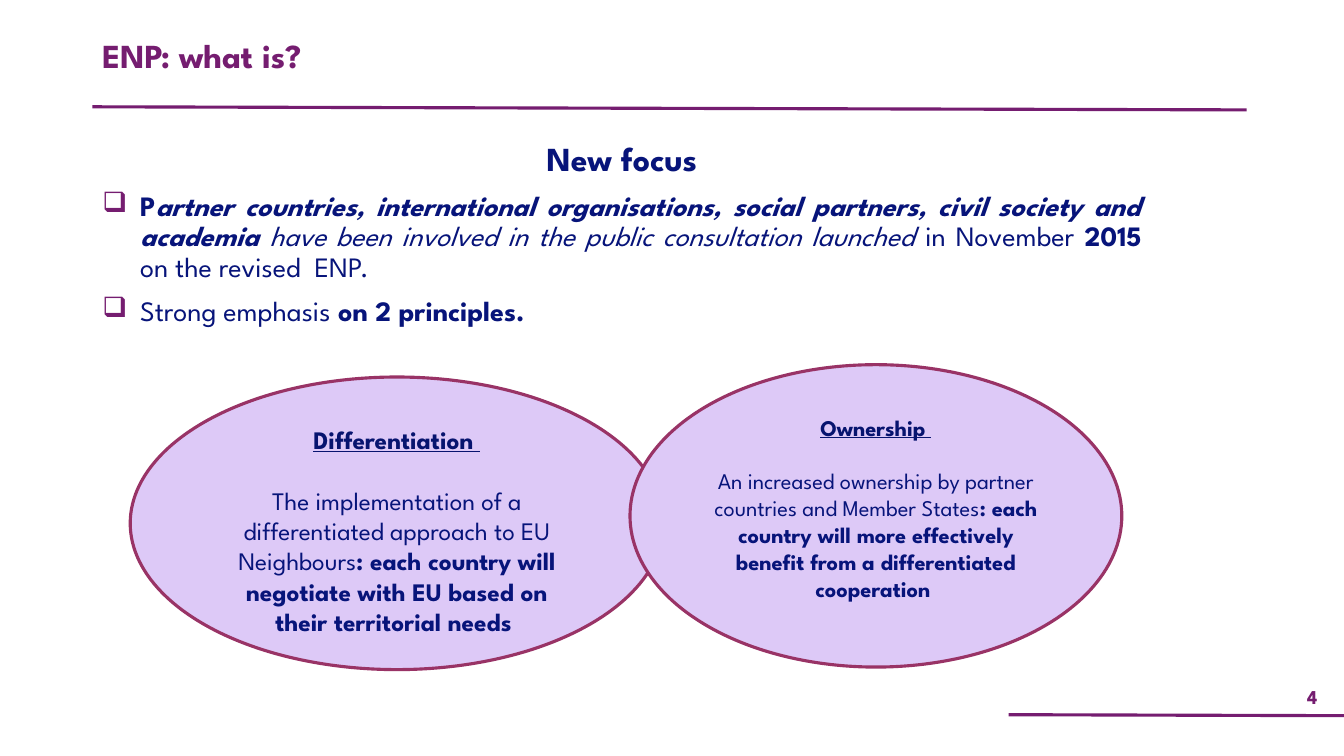
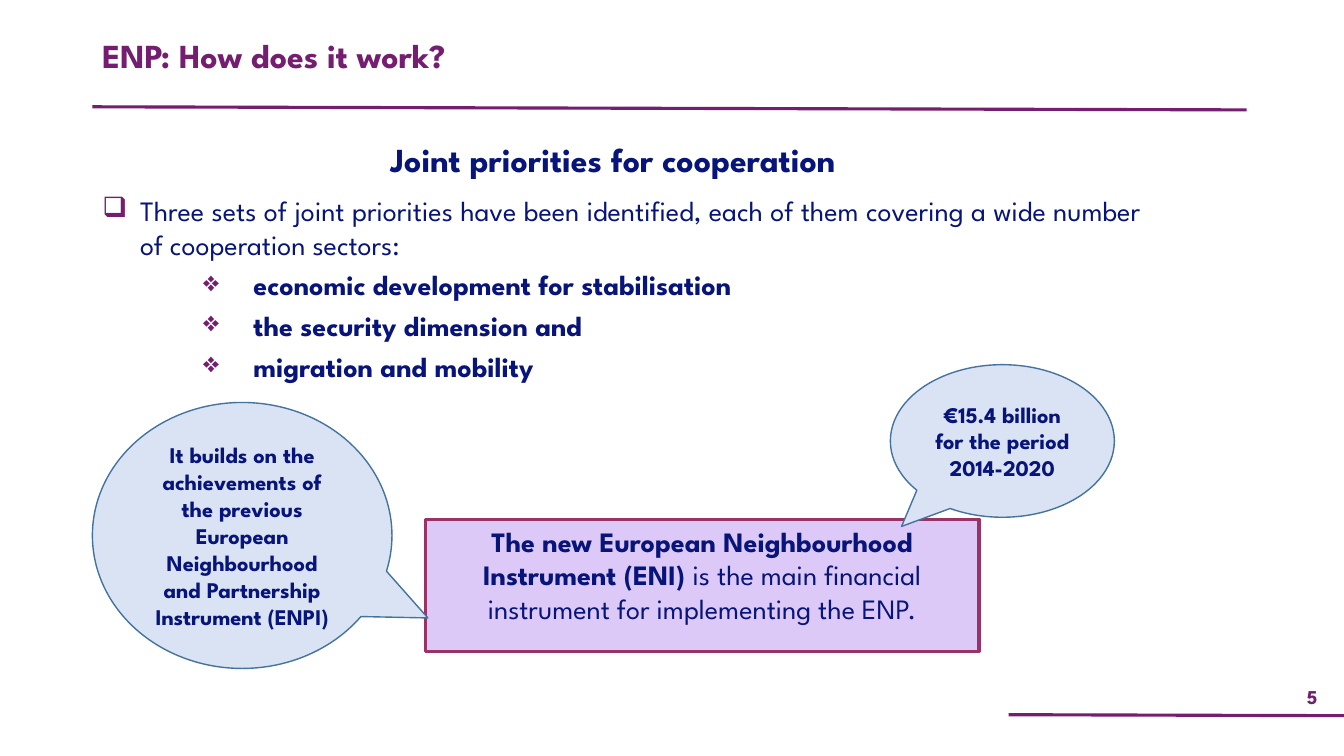
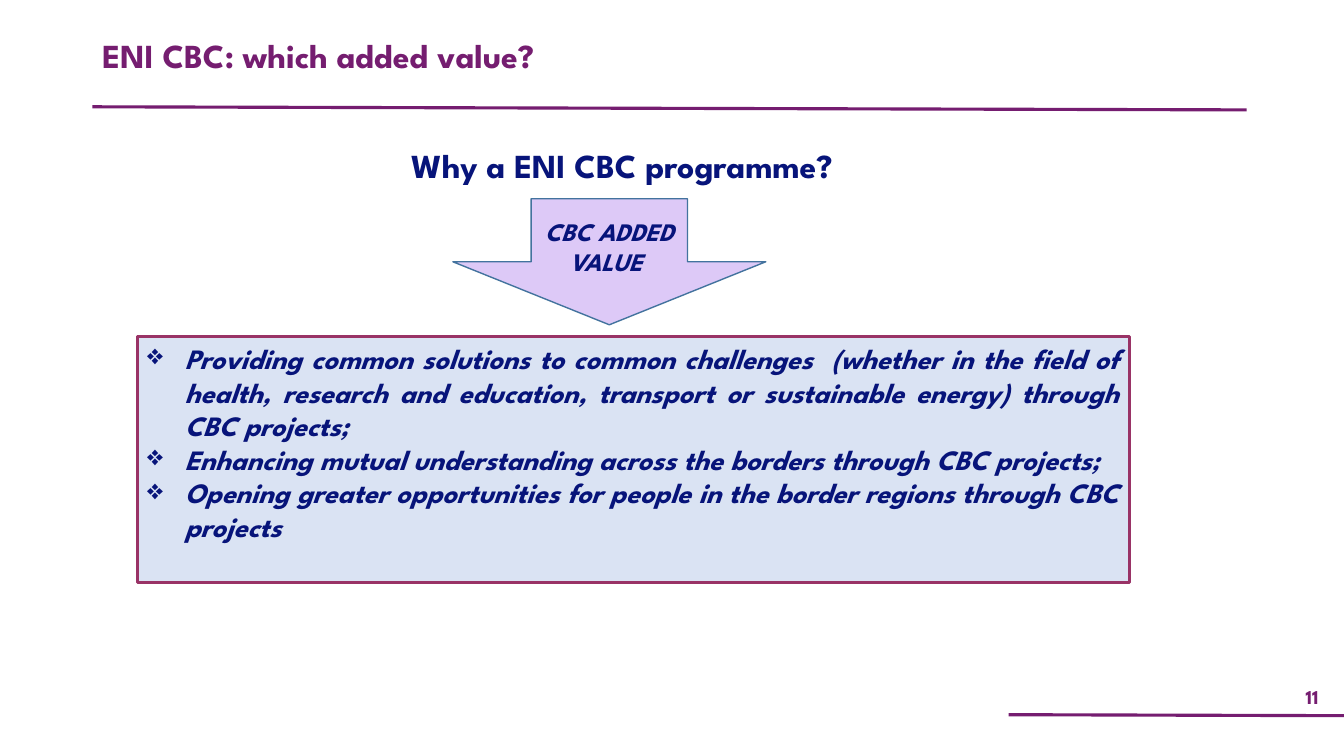
import pptx
import pptx.util
import pptx.dml.color
import pptx.enum.shapes
import pptx.enum.text
import pptx.oxml.ns
from lxml import etree

Pt = pptx.util.Pt
SHAPE = pptx.enum.shapes.MSO_SHAPE
ALIGN = pptx.enum.text.PP_ALIGN
ANCHOR = pptx.enum.text.MSO_ANCHOR

FONT = "League Spartan"
COLORS = {
    "purple": "751D70", "navy": "07147A", "dark_navy": "07146F",
    "lilac": "DDC9F7", "pale_blue": "DAE3F3", "plum": "993366", "steel": "43739E",
}
SLIDE_SIZE = (960, 540)
TITLE_BOX = (66, 24.5, 700.5, 47)
NUMBER_BOX = (914.5, 484.5, 45.5, 26)
RULES = [(66, 76.3, 890.5, 78.5), (720.5, 510.5, 960, 511.2)]
LINE_HEIGHT = 1.2  # of the font size

# Paragraph formats
HEADING = {"size": 24, "before": 10, "align": ALIGN.CENTER}
POINT = {"size": 20, "before": 10, "align": ALIGN.JUSTIFY, "bullet": "❑",
         "bullet_color": "purple", "left": 27, "hanging": 27}
SUBPOINT = {**POINT, "before": 5, "bullet": "❖", "left": 108, "hanging": 36}
BOXED_POINT = {**POINT, "before": 0, "bullet": "❖", "bullet_color": "navy"}
TIGHT = {"spacing": 0.9}


def centered(size):
    return {"size": size, "align": ALIGN.CENTER}


def topic(size):
    return {**centered(size), "color": "dark_navy", "after": size * LINE_HEIGHT}


# Shape looks
LILAC_BOX = {"fill": "lilac", "line": "plum", "weight": 2.25}
BLUE_BOX = {**LILAC_BOX, "fill": "pale_blue"}
CALLOUT = {"fill": "pale_blue", "line": "steel", "weight": 1, "anchor": ANCHOR.MIDDLE}
ARROW = {**CALLOUT, "fill": "lilac"}

# Content: a paragraph is (format, runs); a run is (text, style letters b, i, u)
SLIDES = [
    {
        "title": "ENP: what is?", "number": "4",
        "body_box": (66, 98, 756.5, 379.5),
        "body": [
            ({**HEADING, **TIGHT}, [("New focus", "b")]),
            ({**POINT, **TIGHT}, [
                ("P", "b"),
                ("artner countries, international organisations, social partners, "
                 "civil society and academia ", "bi"),
                ("have been involved in the public consultation launched", "i"),
                (" in November ", ""), ("2015 ", "b"), ("on the revised  ENP.", "")]),
            ({**POINT, **TIGHT}, [("Strong emphasis", ""), (" on 2 principles.", "b")]),
        ],
        "shapes": [
            (SHAPE.OVAL, (93, 269.3, 381, 209), LILAC_BOX, [], [
                (topic(18), [("Differentiation ", "bu")]),
                (centered(18), [
                    ("The implementation of a differentiated approach to EU Neighbours", ""),
                    (": each country will negotiate with EU based on their "
                     "territorial needs ", "b")])]),
            (SHAPE.OVAL, (450, 260.5, 351.3, 216), LILAC_BOX, [], [
                (topic(16), [("Ownership ", "bu")]),
                (centered(16), [
                    ("An increased ownership by partner countries and Member States", ""),
                    (": each country will more effectively benefit from a "
                     "differentiated cooperation ", "b")])]),
        ],
    },
    {
        "title": "ENP: How does it work?", "number": "5",
        "body_box": (66, 96, 756.5, 381.5),
        "body": [
            (HEADING, [("Joint priorities for cooperation  ", "b")]),
            (POINT, [("Three sets of joint priorities have been identified, each of them "
                      "covering a wide number of cooperation sectors: ", "")]),
            (SUBPOINT, [("economic development for stabilisation ", "b")]),
            (SUBPOINT, [("the security dimension and ", "b")]),
            (SUBPOINT, [("migration and mobility", "b")]),
        ],
        "shapes": [
            (SHAPE.RECTANGLE, (304, 370.8, 395.3, 94.3), LILAC_BOX, [], [
                (centered(20), [
                    ("The new European Neighbourhood Instrument (ENI) ", "b"),
                    ("is the main financial instrument for implementing the ENP.", "")])]),
            (SHAPE.OVAL_CALLOUT, (636, 260.5, 160, 109), CALLOUT, [-0.45, 0.56], [
                (centered(16), [("€15.4 billion for the period 2014-2020", "b")])]),
            (SHAPE.OVAL_CALLOUT, (66, 287.5, 214, 190), CALLOUT, [0.62, 0.31], [
                (centered(16), [
                    ("It builds on the achievements of the previous European "
                     "Neighbourhood and Partnership Instrument (ENPI)", "b")])]),
        ],
    },
    {
        "title": "ENI CBC: which added value?", "number": "11",
        "body_box": (66, 103.5, 756.5, 355.5),
        "body": [({**HEADING, **TIGHT}, [("Why a ENI CBC programme?", "b")])],
        "shapes": [
            (SHAPE.RECTANGLE, (98, 240.3, 709, 176), BLUE_BOX, [], [
                (BOXED_POINT, [
                    ("Providing common solutions to common challenges  (whether in the "
                     "field of health, research and education, transport or sustainable "
                     "energy) through CBC projects; ", "bi")]),
                (BOXED_POINT, [
                    ("Enhancing mutual understanding across the borders through CBC "
                     "projects;", "bi")]),
                (BOXED_POINT, [
                    ("Opening greater opportunities for people in the border regions "
                     "through CBC projects", "bi")])]),
            (SHAPE.DOWN_ARROW, (323.5, 142, 223.5, 90), ARROW, [], [
                (centered(18), [("CBC ADDED VALUE ", "bi")])]),
        ],
    },
]


def rgb(name):
    return pptx.dml.color.RGBColor.from_string(COLORS[name])


def points(values):
    return [Pt(value) for value in values]


def add_bullet(paragraph, look):
    properties = paragraph._p.get_or_add_pPr()
    properties.set("marL", str(Pt(look["left"])))
    properties.set("indent", str(-Pt(look["hanging"])))
    qn = pptx.oxml.ns.qn
    color = etree.SubElement(properties, qn("a:buClr"))
    etree.SubElement(color, qn("a:srgbClr"), val=COLORS[look["bullet_color"]])
    etree.SubElement(properties, qn("a:buChar"), char=look["bullet"])


def write(frame, paragraphs, anchor=ANCHOR.TOP):
    frame_format = {
        "word_wrap": True, "auto_size": pptx.enum.text.MSO_AUTO_SIZE.NONE,
        "vertical_anchor": anchor, "margin_left": Pt(7.2), "margin_right": Pt(7.2),
        "margin_top": Pt(3.6), "margin_bottom": Pt(3.6),
    }
    for name, value in frame_format.items():
        setattr(frame, name, value)
    for index, (look, runs) in enumerate(paragraphs):
        paragraph = frame.add_paragraph() if index else frame.paragraphs[0]
        if "bullet" in look:
            add_bullet(paragraph, look)
        paragraph_format = {
            "alignment": look["align"], "line_spacing": look.get("spacing", 1.0),
            "space_before": Pt(look.get("before", 0) if index else 0),
            "space_after": Pt(look.get("after", 0)),
        }
        for name, value in paragraph_format.items():
            setattr(paragraph, name, value)
        for text, style in runs:
            run = paragraph.add_run()
            run.text = text
            font_format = {
                "name": FONT, "size": Pt(look["size"]), "bold": "b" in style,
                "italic": "i" in style, "underline": "u" in style,
            }
            for name, value in font_format.items():
                setattr(run.font, name, value)
            run.font.color.rgb = rgb(look.get("color", "navy"))


def add_text(slide, box, paragraphs, anchor=ANCHOR.TOP):
    write(slide.shapes.add_textbox(*points(box)).text_frame, paragraphs, anchor)


def add_rule(slide, ends):
    rule = slide.shapes.add_connector(
        pptx.enum.shapes.MSO_CONNECTOR.STRAIGHT, *points(ends))
    rule.line.color.rgb = rgb("purple")
    rule.line.width = Pt(2.25)
    etree.SubElement(rule._element.spPr, pptx.oxml.ns.qn("a:effectLst"))


def add_frame(slide, title, number):
    """Title, rules and page number shared by all slides."""
    for ends in RULES:
        add_rule(slide, ends)
    placeholder = slide.shapes.title
    for name, value in zip(("left", "top", "width", "height"), points(TITLE_BOX)):
        setattr(placeholder, name, value)
    title_look = {"size": 24, "align": ALIGN.LEFT, "color": "purple", **TIGHT}
    write(placeholder.text_frame, [(title_look, [(title, "b")])])
    number_look = {**centered(14), "color": "purple"}
    add_text(slide, NUMBER_BOX, [(number_look, [(number, "b")])], ANCHOR.MIDDLE)


def add_figure(slide, kind, box, look, adjustments, paragraphs):
    shape = slide.shapes.add_shape(kind, *points(box))
    shape.shadow.inherit = False
    shape.fill.solid()
    shape.fill.fore_color.rgb = rgb(look["fill"])
    shape.line.color.rgb = rgb(look["line"])
    shape.line.width = Pt(look["weight"])
    for index, value in enumerate(adjustments):
        shape.adjustments[index] = value
    write(shape.text_frame, paragraphs, look.get("anchor", ANCHOR.TOP))


def main():
    presentation = pptx.Presentation()
    presentation.slide_width, presentation.slide_height = points(SLIDE_SIZE)
    title_only = presentation.slide_layouts[5]
    for content in SLIDES:
        slide = presentation.slides.add_slide(title_only)
        add_frame(slide, content["title"], content["number"])
        add_text(slide, content["body_box"], content["body"])
        for figure in content["shapes"]:
            add_figure(slide, *figure)
    presentation.save("out.pptx")


if __name__ == "__main__":
    main()
